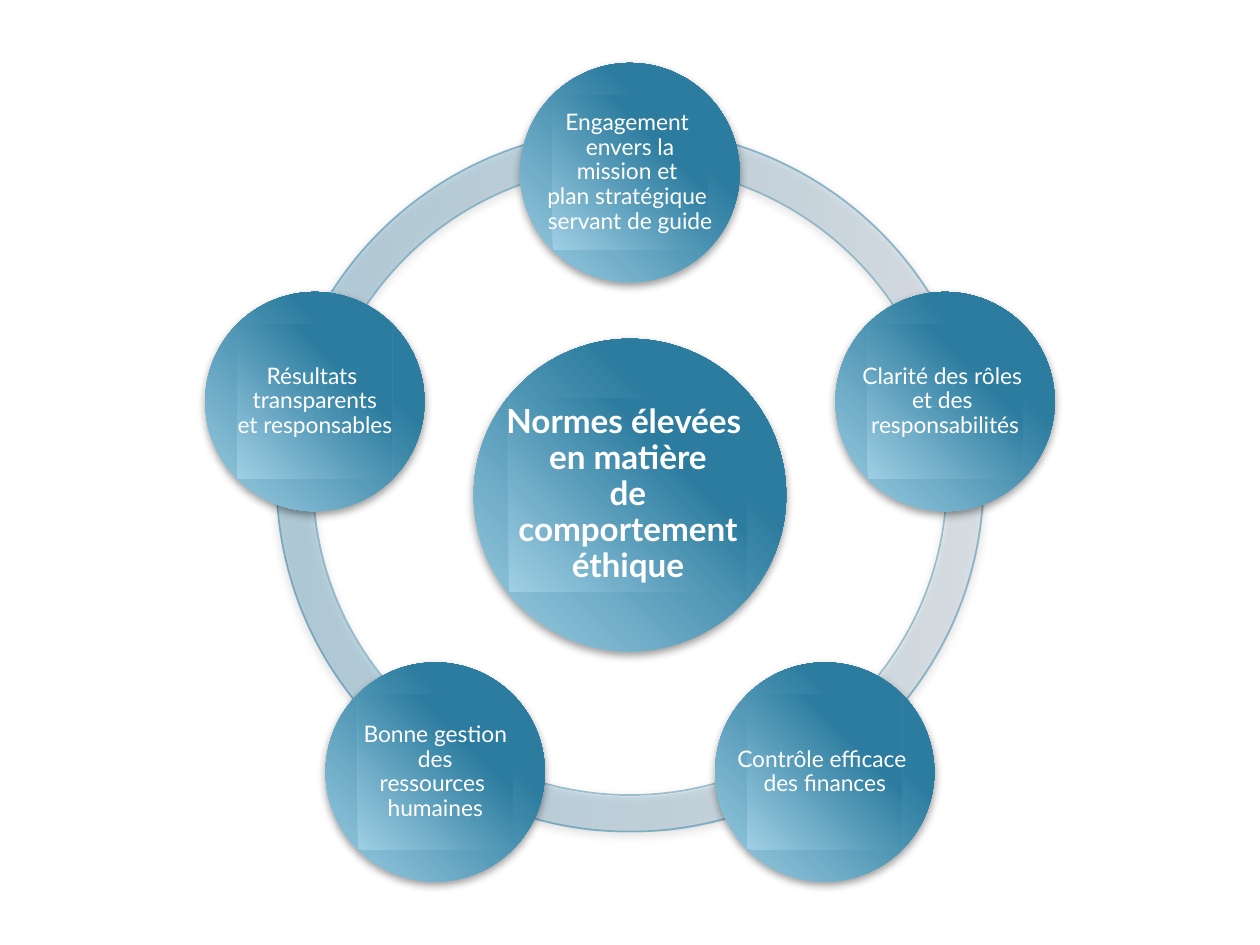
from dataclasses import dataclass
from math import cos, radians, sin

from lxml import etree
from pptx import Presentation
from pptx.dml.color import RGBColor
from pptx.enum.shapes import MSO_SHAPE
from pptx.enum.text import MSO_ANCHOR, PP_ALIGN
from pptx.oxml import parse_xml
from pptx.oxml.ns import nsdecls, qn
from pptx.util import Cm, Pt

DONUT, OVAL, RECT = MSO_SHAPE.DONUT, MSO_SHAPE.OVAL, MSO_SHAPE.RECTANGLE
MIDDLE, CENTER = MSO_ANCHOR.MIDDLE, PP_ALIGN.CENTER


@dataclass(frozen=True)
class Theme:
    font: str = "Lato"
    text: str = "FFFFFF"
    value_size: int = 13
    core_size: int = 19
    ring_line: str = "287A9E"
    ring_stops: tuple = ((0, "2180AA", 27), (69, "75A5C5", 27), (100, "B8CCDC", 27))
    disc_stops: tuple = ((30, "2C7C9F", 100), (100, "9FCFE4", 100))


THEME = Theme()
LINEAR = '<a:lin ang="0" scaled="0"/>'
FROM_TOP_RIGHT = '<a:path path="circle"><a:fillToRect l="100000" b="100000"/></a:path>'

VALUES = [
    ["Engagement ", "envers la", "mission et ", "plan stratégique ", "servant de guide"],
    ["Clarité des rôles ", "et des ", "responsabilités"],
    ["Contrôle efficace ", "des finances"],
    ["Bonne gestion", "des", "ressources ", "humaines"],
    ["Résultats ", "transparents", "et responsables"],
]
CORE = ["Normes élevées ", "en matière", "de", "comportement", "éthique"]


def add_centered(slide, kind, x, y, width, height):
    """Add a shape, without line or shadow, around a centre given in cm."""
    shape = slide.shapes.add_shape(
        kind, Cm(x - width / 2), Cm(y - height / 2), Cm(width), Cm(height))
    shape.line.fill.background()
    shape.shadow.inherit = False
    return shape


def set_gradient(shape, stops, direction):
    stop_xml = "".join(
        f'<a:gs pos="{pos * 1000}"><a:srgbClr val="{color}">'
        f'<a:alpha val="{alpha * 1000}"/></a:srgbClr></a:gs>'
        for pos, color, alpha in stops)
    gradient = parse_xml(
        f'<a:gradFill {nsdecls("a")} rotWithShape="1">'
        f'<a:gsLst>{stop_xml}</a:gsLst>{direction}</a:gradFill>')
    shape.element.spPr.find(qn("a:prstGeom")).addnext(gradient)


def add_shadow(shape):
    effects = shape.element.spPr.find(qn("a:effectLst"))
    effects.append(parse_xml(
        f'<a:outerShdw {nsdecls("a")} blurRad="{Pt(5)}" dist="{Pt(2)}" dir="5400000" '
        'rotWithShape="0"><a:srgbClr val="000000"><a:alpha val="40000"/>'
        '</a:srgbClr></a:outerShdw>'))


def write_lines(shape, lines, size, bold, inset):
    frame = shape.text_frame
    frame_format = {
        "word_wrap": False, "vertical_anchor": MIDDLE,
        "margin_left": inset, "margin_right": inset,
        "margin_top": inset, "margin_bottom": inset,
    }
    for name, value in frame_format.items():
        setattr(frame, name, value)
    frame.text = "\n".join(lines)
    for paragraph in frame.paragraphs:
        paragraph.alignment = CENTER
        paragraph.line_spacing = 0.9
        font = paragraph.runs[0].font
        for name, value in {"name": THEME.font, "size": Pt(size), "bold": bold}.items():
            setattr(font, name, value)
        font.color.rgb = RGBColor.from_string(THEME.text)


def add_ring(slide, x, y, width, height):
    ring = add_centered(slide, DONUT, x, y, width, height)
    ring.adjustments[0] = 0.052
    ring.line.color.rgb = RGBColor.from_string(THEME.ring_line)
    ring.line.width = Pt(1)
    line_color = ring.line._get_or_add_ln().find(".//" + qn("a:srgbClr"))
    etree.SubElement(line_color, qn("a:alpha"), val="43000")
    set_gradient(ring, THEME.ring_stops, LINEAR)
    add_shadow(ring)


def add_disc(slide, x, y, diameter, label_box, lines, size, bold=False, inset=0):
    """Shaded disc with a label tile on top; label_box is (dx, width, height)."""
    disc = add_centered(slide, OVAL, x, y, diameter, diameter)
    add_shadow(disc)
    dx, width, height = label_box
    label = add_centered(slide, RECT, x + dx, y, width, height)
    for part in (disc, label):
        set_gradient(part, THEME.disc_stops, FROM_TOP_RIGHT)
    write_lines(label, lines, size, bold, inset)


def add_value_wheel(slide, left, top, width, height):
    x, y = left + width / 2, top + height / 2
    add_ring(slide, x, y - 0.48, 14.25, 14.17)

    # Values, clockwise from the top
    orbit = 6.68
    for index, lines in enumerate(VALUES):
        angle = radians(index * 360 / len(VALUES))
        add_disc(slide, x + orbit * sin(angle), y - orbit * cos(angle),
                 4.42, (0, 3.12, 3.12), lines, THEME.value_size)

    # Core value
    add_disc(slide, x, y - 0.18, 6.3, (-0.04, 4.8, 3.91), CORE,
             THEME.core_size, bold=True, inset=Cm(0.08))


def main():
    deck = Presentation()
    deck.slide_width, deck.slide_height = Cm(25.4), Cm(19.05)
    slide = deck.slides.add_slide(deck.slide_layouts[6])
    add_value_wheel(slide, 4.13, 1.27, 17.14, 17.78)
    deck.save("out.pptx")


if __name__ == "__main__":
    main()
